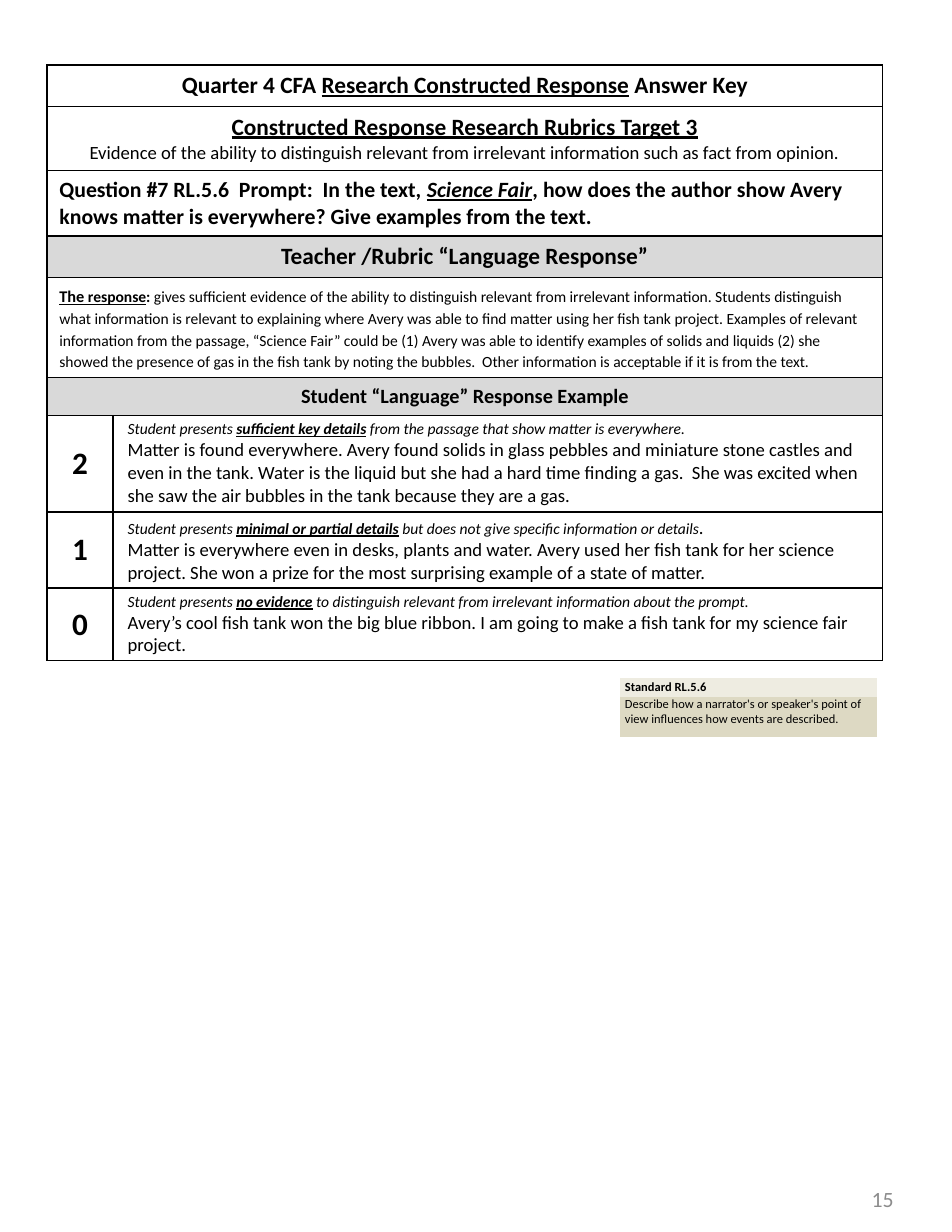
from lxml import etree
from pptx import Presentation
from pptx import util as u
from pptx.dml.color import RGBColor
from pptx.enum import text
from pptx.oxml.ns import qn

LEFT, CENTER, RIGHT = text.PP_ALIGN.LEFT, text.PP_ALIGN.CENTER, text.PP_ALIGN.RIGHT
TOP, MIDDLE = text.MSO_ANCHOR.TOP, text.MSO_ANCHOR.MIDDLE
BLACK, GRAY = "000000", "D9D9D9"
WIDE, SCORED, TIGHT = (0.11, 0.06), (0.13, 0.04), (0.04, 0)

HEADINGS = [
    (0.37, CENTER, None, 1, [[("Quarter 4 CFA ", 15, "b"),
                              ("Research Constructed Response", 15, "bu"),
                              (" Answer Key", 15, "b")]]),
    (0.57, CENTER, None, 1, [
        [("Constructed Response Research Rubrics Target 3", 15, "bu")],
        [("Evidence of the ability to distinguish relevant from irrelevant information "
          "such as fact from opinion.", 12, "")]]),
    (0.54, LEFT, None, 1, [[
        ("Question #7 RL.5.6  Prompt:  In the text, ", 14, "b"),
        ("Science Fair", 14, "biu"),
        (", how does the author show Avery knows matter is everywhere? "
         "Give examples from the text.", 14, "b")]]),
    (0.37, CENTER, GRAY, 1, [[("Teacher /Rubric “Language Response”", 15, "b")]]),
    (0.88, LEFT, None, 1.15, [[
        ("The ", 10.5, "bu"), ("response", 10, "bu"), (": ", 10, "b"),
        ("gives sufficient evidence of the ability to distinguish relevant from irrelevant "
         "information. Students distinguish what information is relevant to explaining where "
         "Avery was able to find matter using her fish tank project. Examples of relevant "
         "information from the passage, “Science Fair” could be (1) Avery was able to identify "
         "examples of solids and liquids (2) she showed the presence of gas in the fish tank by "
         "noting the bubbles.  Other information is acceptable if it is from the text.", 10, "")]]),
    (0.33, CENTER, GRAY, 1, [[("Student “Language” Response Example", 13, "b")]]),
]

SCORES = [
    (0.86, "2", "sufficient key details",
     [(" from the passage that show matter is everywhere.", 10, "i")],
     "Matter is found everywhere. Avery found solids in glass pebbles and miniature stone "
     "castles and even in the tank. Water is the liquid but she had a hard time finding a gas.  "
     "She was excited when she saw the air bubbles in the tank because they are a gas."),
    (0.68, "1", "minimal or partial details",
     [(" but does not give specific information or details", 10, "i"), (".", 12, "")],
     "Matter is everywhere even in desks, plants and water. Avery used her fish tank for her "
     "science project. She won a prize for the most surprising example of a state of matter."),
    (0.65, "0", "no evidence",
     [(" to distinguish relevant from irrelevant information about the prompt.", 10, "i")],
     "Avery’s cool fish tank won the big blue ribbon. I am going to make a fish tank for my "
     "science fair project."),
]

STANDARD = [
    (0.17, "EEECE1", MIDDLE, ("Standard RL.5.6", 8, "b")),
    (0.36, "DDD9C3", TOP, ("Describe how a narrator's or speaker's point of view influences "
                           "how events are described.", 8, "")),
]


def color(value):
    return RGBColor.from_string(value)


def write(frame, paragraphs, align=LEFT, spacing=1, ink=BLACK):
    frame.word_wrap = True
    for index, runs in enumerate(paragraphs):
        paragraph = frame.add_paragraph() if index else frame.paragraphs[0]
        paragraph.alignment = align
        paragraph.line_spacing = spacing
        for words, size, style in runs:
            run = paragraph.add_run()
            run.text = words
            font = run.font
            font.name, font.size = "Calibri", u.Pt(size)
            font.bold, font.italic, font.underline = (mark in style for mark in "biu")
            font.color.rgb = color(ink)


def inset(target, margins, anchor):
    target.margin_left = target.margin_right = u.Inches(margins[0])
    target.margin_top = target.margin_bottom = u.Inches(margins[1])
    target.vertical_anchor = anchor


def border(cell, ink):
    properties = cell._tc.get_or_add_tcPr()
    for side in ("a:lnL", "a:lnR", "a:lnT", "a:lnB"):
        line = etree.SubElement(properties, qn(side), w=str(u.Pt(1)))
        if ink:
            solid = etree.SubElement(line, qn("a:solidFill"))
            etree.SubElement(solid, qn("a:srgbClr"), val=ink)
        else:
            etree.SubElement(line, qn("a:noFill"))


def add_grid(slide, left, top, columns, rows, ink):
    grid = slide.shapes.add_table(
        len(rows), len(columns), u.Inches(left), u.Inches(top),
        u.Inches(sum(columns)), u.Inches(sum(rows))).table
    grid.first_row = grid.horz_banding = False
    for column, width in zip(grid.columns, columns):
        column.width = u.Inches(width)
    for row, height in zip(grid.rows, rows):
        row.height = u.Inches(height)
    for cell in grid.iter_cells():
        border(cell, ink)
        cell.fill.background()
    return grid


def fill_cell(cell, paragraphs, margins, anchor=TOP, fill=None, align=LEFT, spacing=1):
    inset(cell, margins, anchor)
    if fill:
        cell.fill.solid()
        cell.fill.fore_color.rgb = color(fill)
    write(cell.text_frame, paragraphs, align, spacing)


def main():
    deck = Presentation()
    deck.slide_width, deck.slide_height = u.Inches(8.5), u.Inches(11)
    slide = deck.slides.add_slide(deck.slide_layouts[6])

    page = slide.shapes.add_textbox(
        u.Inches(7.17), u.Inches(10.41), u.Inches(0.92), u.Inches(0.59)).text_frame
    inset(page, WIDE, MIDDLE)
    write(page, [[("15", 14, "")]], RIGHT, ink="8C8C8C")

    rubric = add_grid(slide, 0.42, 0.58, (0.59, 6.87),
                      [row[0] for row in HEADINGS + SCORES], BLACK)
    for row, (_, align, fill, spacing, paragraphs) in enumerate(HEADINGS):
        heading = rubric.cell(row, 0)
        heading.merge(rubric.cell(row, 1))
        fill_cell(heading, paragraphs, WIDE, TOP, fill, align, spacing)
    for row, (_, score, evidence, ending, answer) in enumerate(SCORES, len(HEADINGS)):
        fill_cell(rubric.cell(row, 0), [[(score, 20, "b")]], WIDE, MIDDLE, align=CENTER)
        criterion = [("Student presents ", 10, "i"), (evidence, 10, "biu"), *ending]
        fill_cell(rubric.cell(row, 1), [criterion, [(answer, 12, "")]], SCORED)

    standard = add_grid(slide, 5.54, 6.05, (2.29,), [row[0] for row in STANDARD], None)
    for row, (_, fill, anchor, words) in enumerate(STANDARD):
        fill_cell(standard.cell(row, 0), [[words]], TIGHT, anchor, fill)

    deck.save("out.pptx")


if __name__ == "__main__":
    main()
